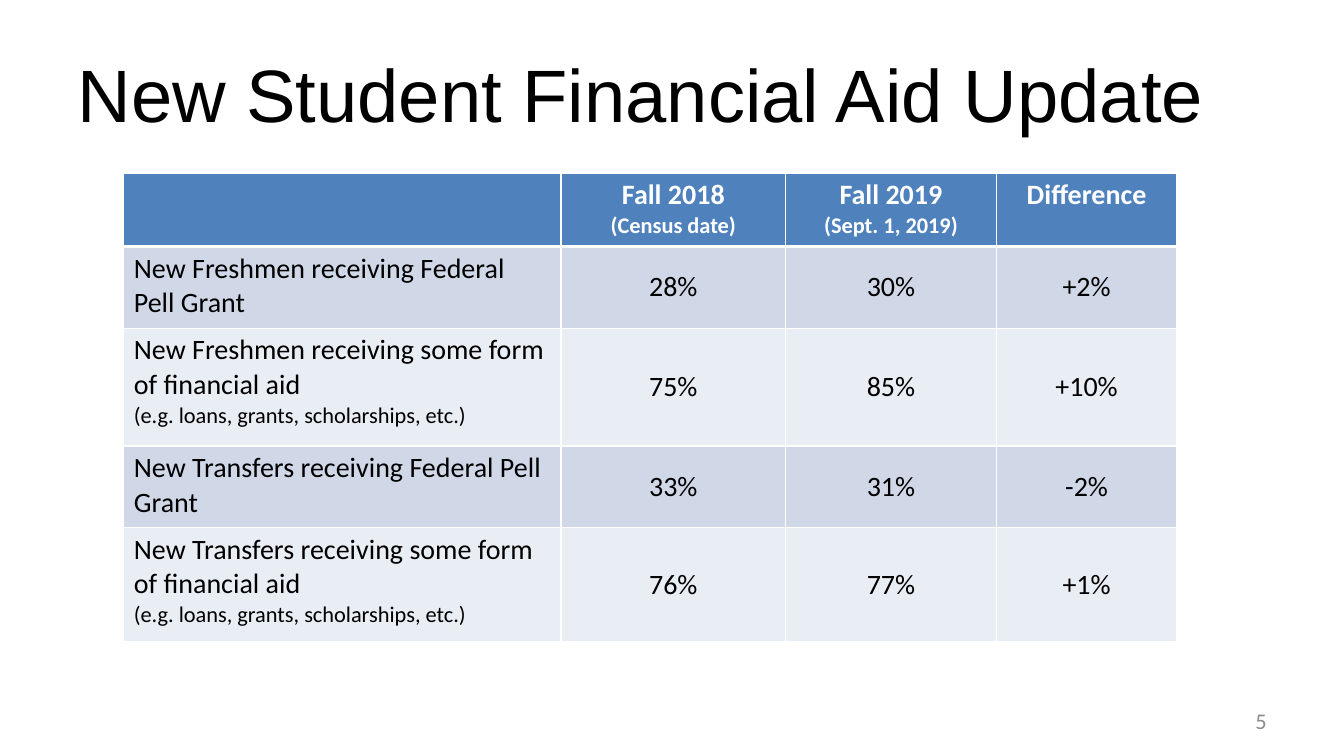
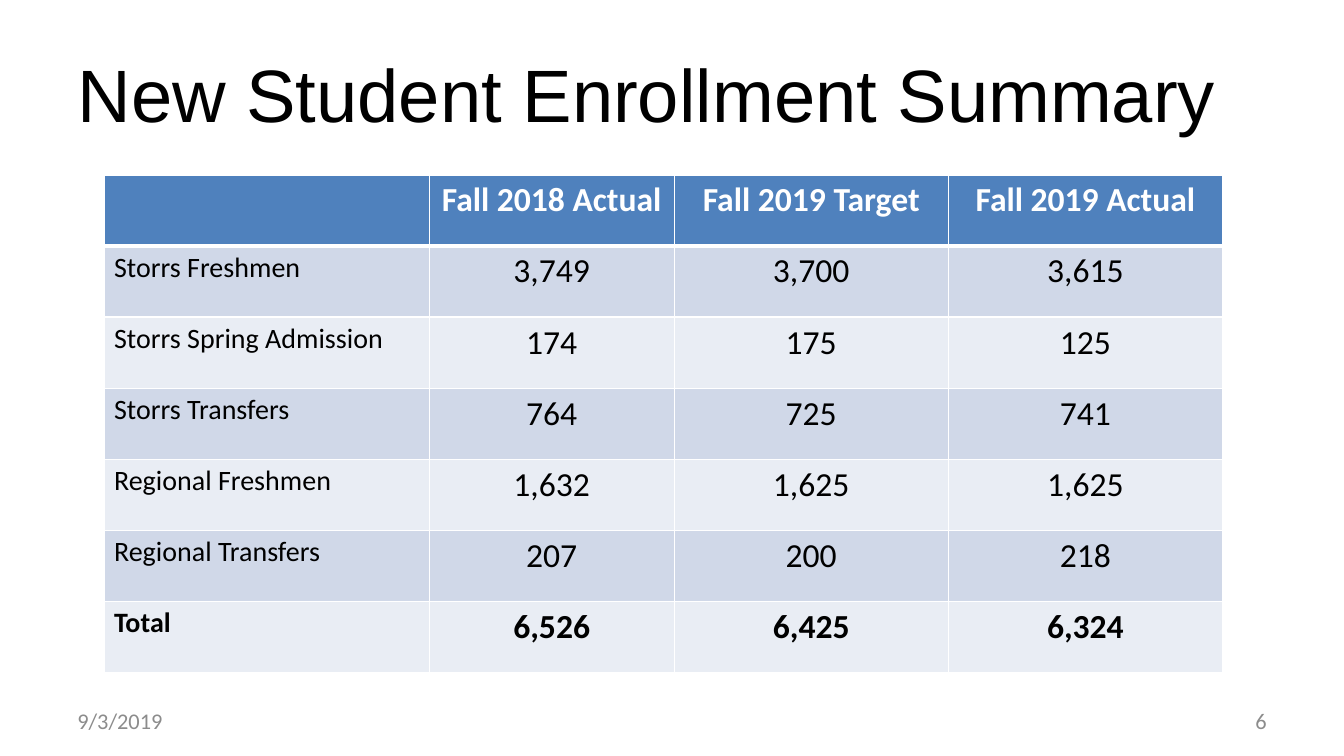
from lxml import etree
from pptx import Presentation
from pptx.dml.color import RGBColor
from pptx.enum.text import MSO_ANCHOR, MSO_AUTO_SIZE, PP_ALIGN
from pptx.oxml.ns import qn
from pptx.util import Cm, Pt

LEFT, CENTER, RIGHT = PP_ALIGN.LEFT, PP_ALIGN.CENTER, PP_ALIGN.RIGHT
TOP, MIDDLE = MSO_ANCHOR.TOP, MSO_ANCHOR.MIDDLE
NO_FIT = MSO_AUTO_SIZE.NONE

# Shared style
COLORS = {"text": "000000", "white": "FFFFFF", "header": "4F81BD",
          "band_dark": "D0D8E8", "band_light": "E9EDF4", "footer": "8C8C8C"}
TITLE_FONT, BODY_FONT = "Arial", "Calibri"
TITLE_SIZE, LABEL_SIZE, NOTE_SIZE, FOOTER_SIZE = 53, 20, 16, 16
MARGIN, FOOTER_TOP, FOOTER_W, FOOTER_H = 1.7, 17.65, 7.9, 1.02
SLIDE_W, SLIDE_H = 33.87, 19.05

# Content: the second line of a cell is a note; lengths in cm
NOTE = "(e.g. loans, grants, scholarships, etc.)"
SLIDES = [
    {"title": "New Student Financial Aid Update",
     "number": "5", "date": None,
     "at": (3.12, 4.36), "cols": (11.02, 5.66, 5.31, 4.55),
     "heights": (1.85, 2.06, 2.97, 2.06, 2.87),
     "value_size": 20, "value_anchor": MIDDLE,
     "rows": [
         ("", "Fall 2018\n(Census date)", "Fall 2019\n(Sept. 1, 2019)",
          "Difference"),
         ("New Freshmen receiving Federal Pell Grant", "28%", "30%", "+2%"),
         ("New Freshmen receiving some form of financial aid\n" + NOTE,
          "75%", "85%", "+10%"),
         ("New Transfers receiving Federal Pell Grant", "33%", "31%", "-2%"),
         ("New Transfers receiving some form of financial aid\n" + NOTE,
          "76%", "77%", "+1%"),
     ]},
    {"title": "New Student Enrollment Summary",
     "number": "6", "date": "9/3/2019",
     "at": (2.62, 4.41), "cols": (8.2, 6.17, 6.91, 6.91),
     "heights": (1.79,) * 7,
     "value_size": 24, "value_anchor": TOP,
     "rows": [
         ("", "Fall 2018 Actual", "Fall 2019 Target", "Fall 2019 Actual"),
         ("Storrs Freshmen", "3,749", "3,700", "3,615"),
         ("Storrs Spring Admission", "174", "175", "125"),
         ("Storrs Transfers", "764", "725", "741"),
         ("Regional Freshmen", "1,632", "1,625", "1,625"),
         ("Regional Transfers", "207", "200", "218"),
         ("Total", "6,526", "6,425", "6,324"),
     ]},
]


def rgb(name):
    return RGBColor.from_string(COLORS[name])


def style(p, size, color, font=BODY_FONT, bold=False, align=LEFT):
    p.alignment = align
    for r in p.runs:
        r.font.name, r.font.size, r.font.bold = font, Pt(size), bold
        r.font.color.rgb = rgb(color)


def add_title(s, text):
    sp = s.shapes.title
    sp.left, sp.top, sp.width, sp.height = Cm(MARGIN), Cm(0.76), Cm(30.48), Cm(3.18)
    tf = sp.text_frame
    tf.text = text
    tf.auto_size, tf.vertical_anchor = NO_FIT, MIDDLE
    style(tf.paragraphs[0], TITLE_SIZE, "text", TITLE_FONT)


def add_footer(s, text, left, align):
    sp = s.shapes.add_textbox(Cm(left), Cm(FOOTER_TOP), Cm(FOOTER_W), Cm(FOOTER_H))
    tf = sp.text_frame
    tf.text = text
    tf.word_wrap, tf.vertical_anchor = True, MIDDLE
    style(tf.paragraphs[0], FOOTER_SIZE, "footer", align=align)


def set_borders(cell, row):
    """White rules, 1 pt, with 3 pt between the header and the body."""
    widths = {"L": 1, "R": 1, "T": 3 if row == 1 else 1, "B": 3 if row == 0 else 1}
    tc_pr = cell._tc.get_or_add_tcPr()
    for side, width in widths.items():
        ln = etree.SubElement(tc_pr, qn(f"a:ln{side}"), w=str(Pt(width)))
        fill = etree.SubElement(ln, qn("a:solidFill"))
        etree.SubElement(fill, qn("a:srgbClr"), val=COLORS["white"])


def fill_cell(cell, text, row, col, data):
    header, label = row == 0, col == 0
    set_borders(cell, row)
    cell.fill.solid()
    band = "band_dark" if row % 2 else "band_light"
    cell.fill.fore_color.rgb = rgb("header" if header else band)
    cell.vertical_anchor = TOP if header or label else data["value_anchor"]
    cell.text_frame.text = text
    size = LABEL_SIZE if label else data["value_size"]
    bold = header or data["rows"][row][0] == "Total"
    for i, p in enumerate(cell.text_frame.paragraphs):
        style(p, NOTE_SIZE if i else size, "white" if header else "text",
              bold=bold, align=LEFT if label else CENTER)


def add_data_table(s, data):
    rows, cols, heights = data["rows"], data["cols"], data["heights"]
    left, top = data["at"]
    table = s.shapes.add_table(len(rows), len(cols), Cm(left), Cm(top),
                               Cm(sum(cols)), Cm(sum(heights))).table
    for column, width in zip(table.columns, cols):
        column.width = Cm(width)
    for i, (row, height) in enumerate(zip(rows, heights)):
        table.rows[i].height = Cm(height)
        for j, text in enumerate(row):
            fill_cell(table.cell(i, j), text, i, j, data)


def main():
    prs = Presentation()
    prs.slide_width, prs.slide_height = Cm(SLIDE_W), Cm(SLIDE_H)
    title_only = prs.slide_layouts[5]
    for data in SLIDES:
        s = prs.slides.add_slide(title_only)
        add_title(s, data["title"])
        add_data_table(s, data)
        if data["date"]:
            add_footer(s, data["date"], MARGIN, LEFT)
        add_footer(s, data["number"], SLIDE_W - MARGIN - FOOTER_W, RIGHT)
    prs.save("out.pptx")


if __name__ == "__main__":
    main()
